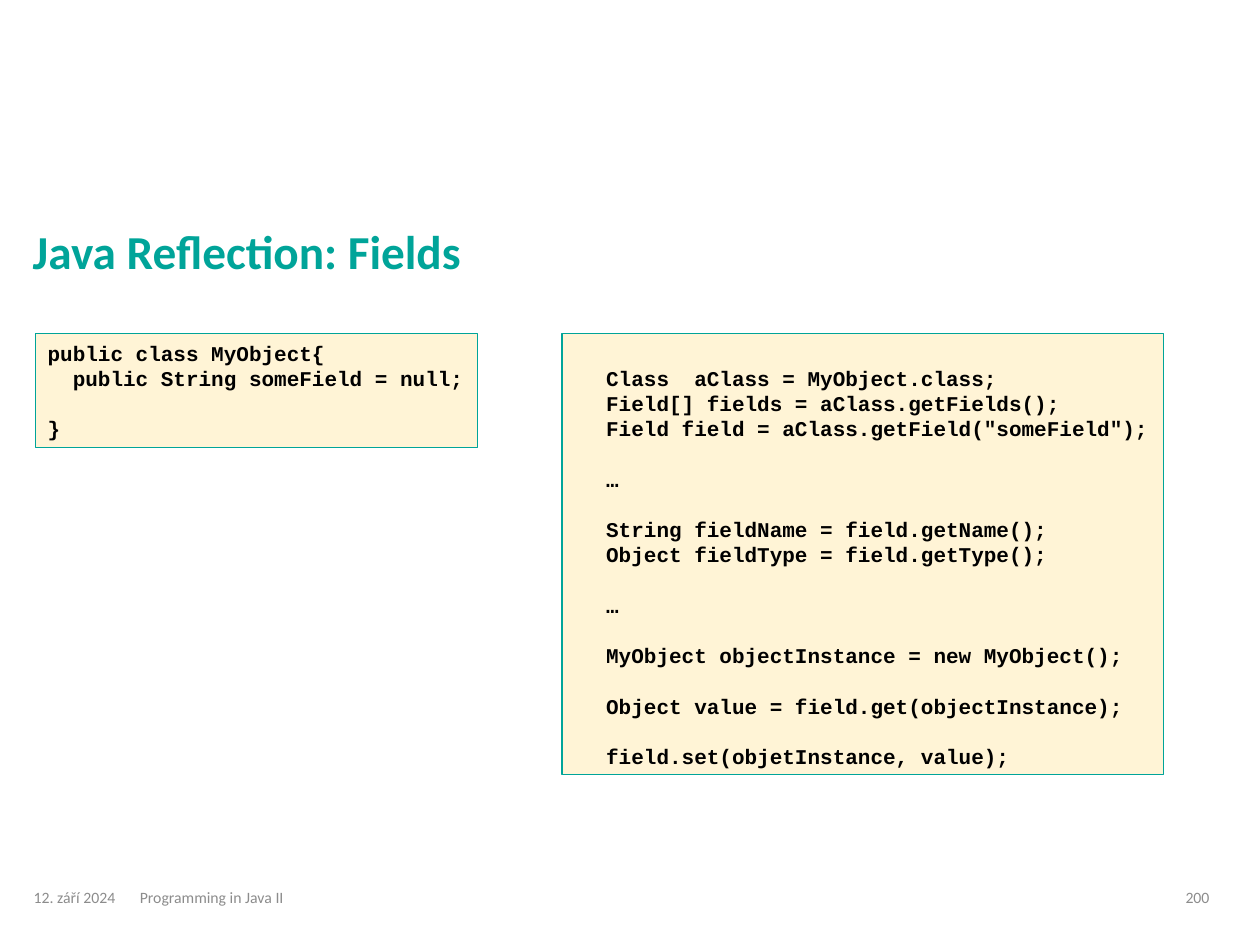
from lxml.etree import SubElement
from pptx import Presentation
from pptx.dml.color import RGBColor
from pptx.enum.shapes import MSO_SHAPE
from pptx.enum.text import MSO_ANCHOR, PP_ALIGN
from pptx.oxml.ns import qn
from pptx.util import Cm, Pt

COLORS = {"teal": "00A499", "cream": "FFF2CC", "code": "000000", "footer": "8C8C8C"}
CODE_LEADING = Pt(14.4)
CODE_TOP = 6.73
FOOTER_TOP, FOOTER_HEIGHT = 17.65, 0.86

# An empty entry is a blank line in the code
CLASS_CODE = [
    "public class MyObject{",
    "  public String someField = null;",
    "",
    "}",
]
REFLECTION_CODE = [
    "Class  aClass = MyObject.class;",
    "Field[] fields = aClass.getFields();",
    'Field field = aClass.getField("someField");',
    "",
    "…",
    "",
    "String fieldName = field.getName();",
    "Object fieldType = field.getType();",
    "",
    "…",
    "",
    "MyObject objectInstance = new MyObject();",
    "",
    "Object value = field.get(objectInstance);",
    "",
    "field.set(objetInstance, value);",
]


def color(name):
    return RGBColor.from_string(COLORS[name])


def style(paragraph, font_name, size, color_name, bold=False):
    for run in paragraph.runs:
        run.font.name = font_name
        run.font.size = Pt(size)
        run.font.bold = bold
        run.font.color.rgb = color(color_name)


def add_label(slide, text, left, top, width, height, size, color_name,
              anchor=MSO_ANCHOR.MIDDLE, bold=False):
    label = slide.shapes.add_textbox(Cm(left), Cm(top), Cm(width), Cm(height))
    frame = label.text_frame
    frame.word_wrap = True
    frame.vertical_anchor = anchor
    frame.text = text
    style(frame.paragraphs[0], "Calibri", size, color_name, bold)
    return frame.paragraphs[0]


def add_code(slide, lines, left, width, height, margin_top=0.13, indent=0, wrap=True):
    panel = slide.shapes.add_shape(
        MSO_SHAPE.RECTANGLE, Cm(left), Cm(CODE_TOP), Cm(width), Cm(height))
    panel.shadow.inherit = False
    panel.fill.solid()
    panel.fill.fore_color.rgb = color("cream")
    fill_color = panel.fill._xPr.find(qn("a:solidFill"))[0]
    SubElement(fill_color, qn("a:alpha"), val="79000")
    panel.line.color.rgb = color("teal")
    panel.line.width = Pt(0)

    frame = panel.text_frame
    frame.word_wrap = wrap
    frame.vertical_anchor = MSO_ANCHOR.TOP
    frame.margin_left = Cm(0.25 + indent)
    frame.margin_right = Cm(0.25)
    frame.margin_top, frame.margin_bottom = Cm(margin_top), Cm(0.13)
    frame.text = "\n".join(line for line in lines if line)

    # Blank code lines become space before the line that follows
    follows_blank = [not before for before, line in zip(["start"] + lines, lines) if line]
    for paragraph, has_gap in zip(frame.paragraphs, follows_blank):
        paragraph.alignment = PP_ALIGN.LEFT
        paragraph.line_spacing = CODE_LEADING
        if has_gap:
            paragraph.space_before = CODE_LEADING
        style(paragraph, "Courier New", 12, "code", bold=True)


def main():
    deck = Presentation()
    deck.slide_width, deck.slide_height = Cm(25.4), Cm(19.05)
    slide = deck.slides.add_slide(deck.slide_layouts[6])

    # Title
    title = add_label(slide, "Java Reflection: Fields", 0.41, 2.92, 24.59, 2.84,
                      27, "teal", MSO_ANCHOR.BOTTOM, bold=True)
    title.line_spacing = 0.9

    # Code panels
    add_code(slide, CLASS_CODE, 0.71, 8.92, 2.29, wrap=False)
    add_code(slide, REFLECTION_CODE, 11.33, 12.12, 8.89, margin_top=0.64, indent=0.64)

    # Footer: date, course, page number
    for text, left, width in [
        ("12. září 2024", 0.43, 2.16),
        ("Programming in Java II", 2.57, 20.7),
        ("200", 23.65, 1.27),
    ]:
        add_label(slide, text, left, FOOTER_TOP, width, FOOTER_HEIGHT, 9, "footer")

    deck.save("out.pptx")


if __name__ == "__main__":
    main()
